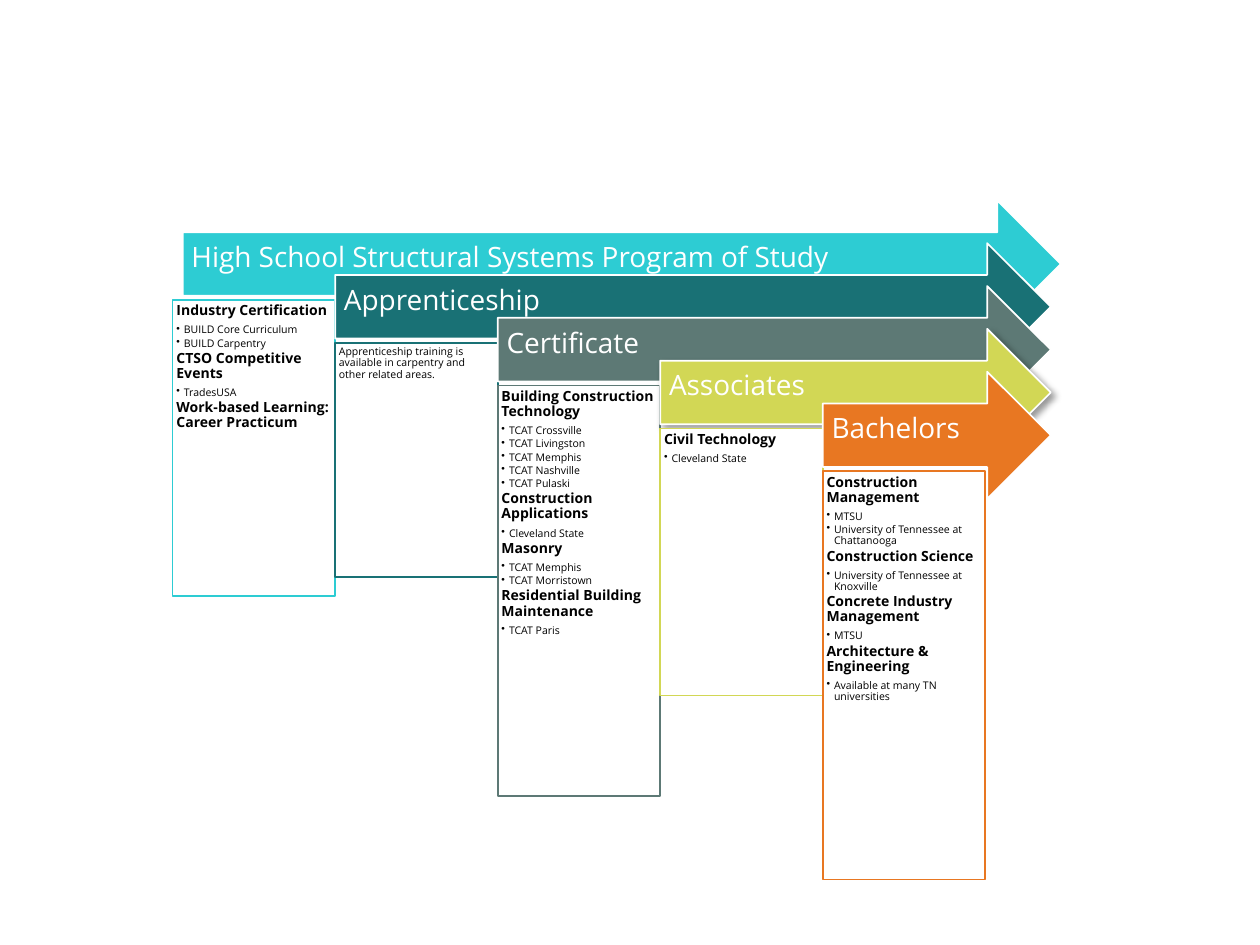
from lxml.etree import SubElement
from pptx import Presentation
from pptx.dml.color import RGBColor
from pptx.enum.shapes import MSO_SHAPE
from pptx.enum.text import MSO_ANCHOR, PP_ALIGN
from pptx.oxml.ns import qn
from pptx.util import Emu, Inches, Pt

TURQUOISE = RGBColor(0x2D, 0xCC, 0xD3)
TEAL = RGBColor(0x19, 0x71, 0x75)
SLATE = RGBColor(0x5D, 0x79, 0x75)
LIME = RGBColor(0xD2, 0xD7, 0x55)
ORANGE = RGBColor(0xE8, 0x77, 0x22)
WHITE = RGBColor(0xFF, 0xFF, 0xFF)
BLACK = RGBColor(0, 0, 0)

COLUMN, ROW = Inches(1.29), Inches(0.34)
LEFT, ARROW_TOP, PANEL_TOP = Inches(1.37), Inches(1.59), Inches(2.38)
ARROW_RIGHT, ARROW_HEIGHT = Inches(8.34), Inches(1.01)
FIRST_ARROW_SHIFT = Inches(0.08)

TITLE = {"size": Pt(16), "bold": False, "name": "Open Sans"}
HEADING = {"size": Pt(8), "bold": True, "name": "Open Sans"}
DETAIL = {"size": Pt(6), "bold": False, "name": "Open Sans"}
ARROW_FRAME = {"margin_left": Inches(0.07), "margin_top": Inches(0.07),
               "margin_right": Inches(0.28), "margin_bottom": Inches(0.16),
               "vertical_anchor": MSO_ANCHOR.MIDDLE, "word_wrap": True}
PANEL_FRAME = {"margin_left": Inches(0.03), "margin_top": Inches(0.03),
               "margin_right": Inches(0.03), "margin_bottom": Inches(0.03),
               "vertical_anchor": MSO_ANCHOR.TOP, "word_wrap": True}

# Each stage: title, colour, panel height in inches, panel fill, {heading: details}
STAGES = [
    ("High School Structural Systems Program of Study", TURQUOISE, 2.35, WHITE, {
        "Industry Certification": ["BUILD Core Curriculum", "BUILD Carpentry"],
        "CTSO Competitive Events": ["TradesUSA"],
        "Work-based Learning: Career Practicum": []}),
    ("Apprenticeship", TEAL, 1.86, None,
     "Apprenticeship training is available in carpentry and other related areas."),
    ("Certificate", SLATE, 3.26, WHITE, {
        "Building Construction Technology": [
            "TCAT Crossville", "TCAT Livingston", "TCAT Memphis",
            "TCAT Nashville", "TCAT Pulaski"],
        "Construction Applications": ["Cleveland State"],
        "Masonry": ["TCAT Memphis", "TCAT Morristown"],
        "Residential Building Maintenance": ["TCAT Paris"]}),
    ("Associates", LIME, 2.12, WHITE, {"Civil Technology": ["Cleveland State"]}),
    ("Bachelors", ORANGE, 3.24, WHITE, {
        "Construction Management": ["MTSU", "University of Tennessee at Chattanooga"],
        "Construction Science": ["University of Tennessee at Knoxville"],
        "Concrete Industry Management": ["MTSU"],
        "Architecture & Engineering": ["Available at many TN universities"]}),
]


def set_all(target, values):
    for name, value in values.items():
        setattr(target, name, value)


def add_block(slide, kind, box, fill, line, frame):
    shape = slide.shapes.add_shape(kind, *box)
    shape.shadow.inherit = False
    if fill is None:
        shape.fill.background()
    else:
        shape.fill.solid()
        shape.fill.fore_color.rgb = fill
    shape.line.color.rgb = line
    shape.line.width = Pt(1)
    set_all(shape.text_frame, frame)
    return shape


def write(paragraph, text, font, color, bullet=False):
    paragraph.text = text
    set_all(paragraph, {"alignment": PP_ALIGN.LEFT, "line_spacing": 0.9,
                        "space_before": Pt(0),
                        "space_after": Pt(1.1 if bullet else 3.4)})
    if bullet:
        paragraph.level = 1
        properties = paragraph._p.get_or_add_pPr()
        indent = Inches(0.06)
        properties.set("marL", str(indent))
        properties.set("indent", str(-indent))
        SubElement(properties, qn("a:buChar"), char="•")
    set_all(paragraph.font, font)
    paragraph.font.color.rgb = color


def add_soft_shadow(shape):
    effects = shape._element.spPr.find(qn("a:effectLst"))
    shadow = SubElement(effects, qn("a:outerShdw"), blurRad=str(Pt(4)),
                        dist=str(Pt(3)), dir=str(45 * 60000), rotWithShape="0")
    color = SubElement(shadow, qn("a:srgbClr"), val=str(BLACK))
    SubElement(color, qn("a:alpha"), val="40000")


def add_arrow(slide, box, title, color):
    arrow = add_block(slide, MSO_SHAPE.RIGHT_ARROW, box, color, WHITE, ARROW_FRAME)
    write(arrow.text_frame.paragraphs[0], title, TITLE, WHITE)
    if color == LIME:
        add_soft_shadow(arrow)


def add_panel(slide, box, color, fill, content):
    panel = add_block(slide, MSO_SHAPE.RECTANGLE, box, fill, color, PANEL_FRAME)
    if isinstance(content, str):
        entries = [(content, DETAIL, False)]
    else:
        entries = []
        for heading, details in content.items():
            entries.append((heading, HEADING, False))
            entries += [(detail, DETAIL, True) for detail in details]
    frame = panel.text_frame
    for index, (text, font, bullet) in enumerate(entries):
        paragraph = frame.add_paragraph() if index else frame.paragraphs[0]
        write(paragraph, text, font, BLACK, bullet)


def add_pathway(slide):
    """Each stage starts one column right of and one row below the last."""
    for index, (title, color, height, fill, content) in enumerate(STAGES):
        left, drop = Emu(LEFT + index * COLUMN), index * ROW
        shift = 0 if index else FIRST_ARROW_SHIFT
        arrow_box = (left + shift, ARROW_TOP + drop, ARROW_RIGHT - left, ARROW_HEIGHT)
        add_arrow(slide, arrow_box, title, color)
        panel_box = (left, PANEL_TOP + drop, COLUMN, Inches(height))
        add_panel(slide, panel_box, color, fill, content)


def main():
    presentation = Presentation()
    presentation.slide_width, presentation.slide_height = Inches(10), Inches(7.5)
    slide = presentation.slides.add_slide(presentation.slide_layouts[6])
    add_pathway(slide)
    presentation.save("out.pptx")


if __name__ == "__main__":
    main()
